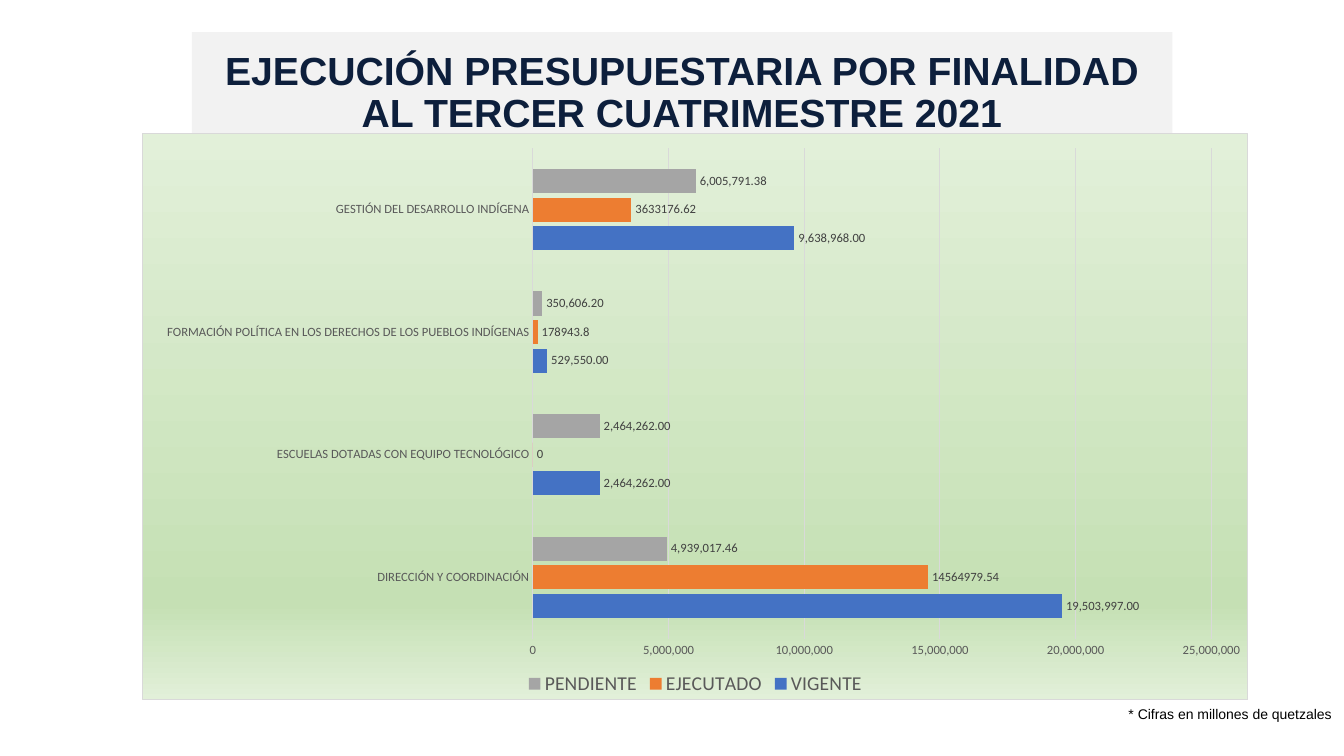
"""Build the slide on budget execution by purpose, third quarter of 2021."""
import pptx
import pptx.chart.data
import pptx.dml.color
import pptx.enum.chart
import pptx.enum.shapes
import pptx.enum.text
import pptx.oxml
import pptx.util

Pt = pptx.util.Pt
RGB = pptx.dml.color.RGBColor.from_string
XL = pptx.enum.chart
THEME = {
    "title": {"name": "Arial", "size": 28, "bold": True, "color": "0D1F3C"},
    "note": {"name": "Arial", "size": 10, "bold": False, "color": "000000"},
    "chart": {"name": "Calibri", "size": 10, "color": "000000"},
    "axis": {"name": "Calibri", "size": 9, "color": "595959"},
    "legend": {"name": "Calibri", "size": 14, "color": "595959"},
    "label": {"name": "Calibri", "size": 9, "color": "404040"},
    "band": "F2F2F2",
    "grid": "D9D9D9",
    "gradient": [(0, "E2F0D9"), (83, "C5E0B4"), (100, "E2F0D9")],
}
CATEGORIES = [
    "DIRECCIÓN Y COORDINACIÓN",
    "ESCUELAS DOTADAS CON EQUIPO TECNOLÓGICO",
    "FORMACIÓN POLÍTICA EN LOS DERECHOS DE LOS PUEBLOS INDÍGENAS",
    "GESTIÓN DEL DESARROLLO INDÍGENA",
]
SERIES = [
    ("VIGENTE", "4472C4", "#,##0.00", (19503997, 2464262, 529550, 9638968)),
    ("EJECUTADO", "ED7D31", "General", (14564979.54, 0, 178943.8, 3633176.62)),
    ("PENDIENTE", "A5A5A5", "#,##0.00", (4939017.46, 2464262, 350606.2, 6005791.38)),
]


def style(font, role):
    """Apply a theme text role to a font."""
    values = dict(THEME[role])
    font.color.rgb = RGB(values.pop("color"))
    values["size"] = Pt(values["size"])
    for key, value in values.items():
        setattr(font, key, value)


def rule(line):
    """Give a line the thin grey of the grid."""
    line.color.rgb = RGB(THEME["grid"])
    line.width = Pt(0.75)


prs = pptx.Presentation()
prs.slide_width, prs.slide_height = Pt(960), Pt(540)
s = prs.slides.add_slide(prs.slide_layouts[5])

band = s.shapes.add_shape(pptx.enum.shapes.MSO_SHAPE.RECTANGLE,
                          Pt(137), Pt(23), Pt(700.5), Pt(77))
band.shadow.inherit = False
band.fill.solid()
band.fill.fore_color.rgb = RGB(THEME["band"])
band.line.fill.background()
s.shapes._spTree.insert(2, band._element)

title = s.shapes.title
title.left, title.top, title.width, title.height = Pt(141), Pt(45.4), Pt(692), Pt(43)
tf = title.text_frame
tf.text = "EJECUCIÓN PRESUPUESTARIA POR FINALIDAD AL TERCER CUATRIMESTRE 2021"
tf.word_wrap = True
tf.auto_size = pptx.enum.text.MSO_AUTO_SIZE.NONE
tf.vertical_anchor = pptx.enum.text.MSO_ANCHOR.MIDDLE
p = tf.paragraphs[0]
p.alignment = pptx.enum.text.PP_ALIGN.CENTER
p.line_spacing = 0.9
style(p.runs[0].font, "title")

note = s.shapes.add_textbox(Pt(799), Pt(500.4), Pt(161), Pt(19.4))
tf = note.text_frame
tf.text = "* Cifras en millones de quetzales"
tf.word_wrap = False
tf.auto_size = pptx.enum.text.MSO_AUTO_SIZE.SHAPE_TO_FIT_TEXT
style(tf.paragraphs[0].runs[0].font, "note")

data = pptx.chart.data.CategoryChartData()
data.categories = CATEGORIES
for name, color, fmt, values in SERIES:
    data.add_series(name, values, number_format=fmt)
chart = s.shapes.add_chart(XL.XL_CHART_TYPE.BAR_CLUSTERED,
                           Pt(101.7), Pt(95.2), Pt(790), Pt(405), data).chart
style(chart.font, "chart")
chart.has_title = False
chart.has_legend = True
chart.legend.position = XL.XL_LEGEND_POSITION.BOTTOM
chart.legend.include_in_layout = False
style(chart.legend.font, "legend")

plot = chart.plots[0]
plot.gap_width, plot.overlap = 170, -18
plot.vary_by_categories = False
for series, (name, color, fmt, values) in zip(plot.series, SERIES):
    series.format.fill.solid()
    series.format.fill.fore_color.rgb = RGB(color)
    series.invert_if_negative = False
    labels = series.data_labels
    style(labels.font, "label")
    labels.show_value = True
    labels.number_format = fmt
    labels.number_format_is_linked = False
    labels.position = XL.XL_LABEL_POSITION.OUTSIDE_END

for axis in (chart.category_axis, chart.value_axis):
    axis.major_tick_mark = axis.minor_tick_mark = XL.XL_TICK_MARK.NONE
    style(axis.tick_labels.font, "axis")
rule(chart.category_axis.format.line)
axis = chart.value_axis
axis.minimum_scale, axis.maximum_scale, axis.major_unit = 0, 25000000, 5000000
axis.tick_labels.number_format = "#,##0"
axis.tick_labels.number_format_is_linked = False
axis.format.line.fill.background()
axis.has_major_gridlines = True
rule(axis.major_gridlines.format.line)

C = "http://schemas.openxmlformats.org/drawingml/2006/chart"
A = "http://schemas.openxmlformats.org/drawingml/2006/main"
area = chart._chartSpace.find(f".//{{{C}}}plotArea")
for layout in area.findall(f"{{{C}}}layout"):
    area.remove(layout)
spots = "".join(f'<c:{key} val="{value}"/>' for key, value in
                (("x", 0.353), ("y", 0.026), ("w", 0.614), ("h", 0.866)))
area.insert(0, pptx.oxml.parse_xml(
    f'<c:layout xmlns:c="{C}"><c:manualLayout><c:layoutTarget val="inner"/>'
    f'<c:xMode val="edge"/><c:yMode val="edge"/>{spots}</c:manualLayout></c:layout>'))
stops = "".join(f'<a:gs pos="{pos * 1000}"><a:srgbClr val="{color}"/></a:gs>'
                for pos, color in THEME["gradient"])
chart._chartSpace.find(f"{{{C}}}chart").addnext(pptx.oxml.parse_xml(
    f'<c:spPr xmlns:c="{C}" xmlns:a="{A}"><a:gradFill><a:gsLst>{stops}</a:gsLst>'
    f'<a:lin ang="5400000" scaled="0"/></a:gradFill><a:ln w="{Pt(0.75)}"><a:solidFill>'
    f'<a:srgbClr val="{THEME["grid"]}"/></a:solidFill></a:ln></c:spPr>'))

prs.save("out.pptx")
